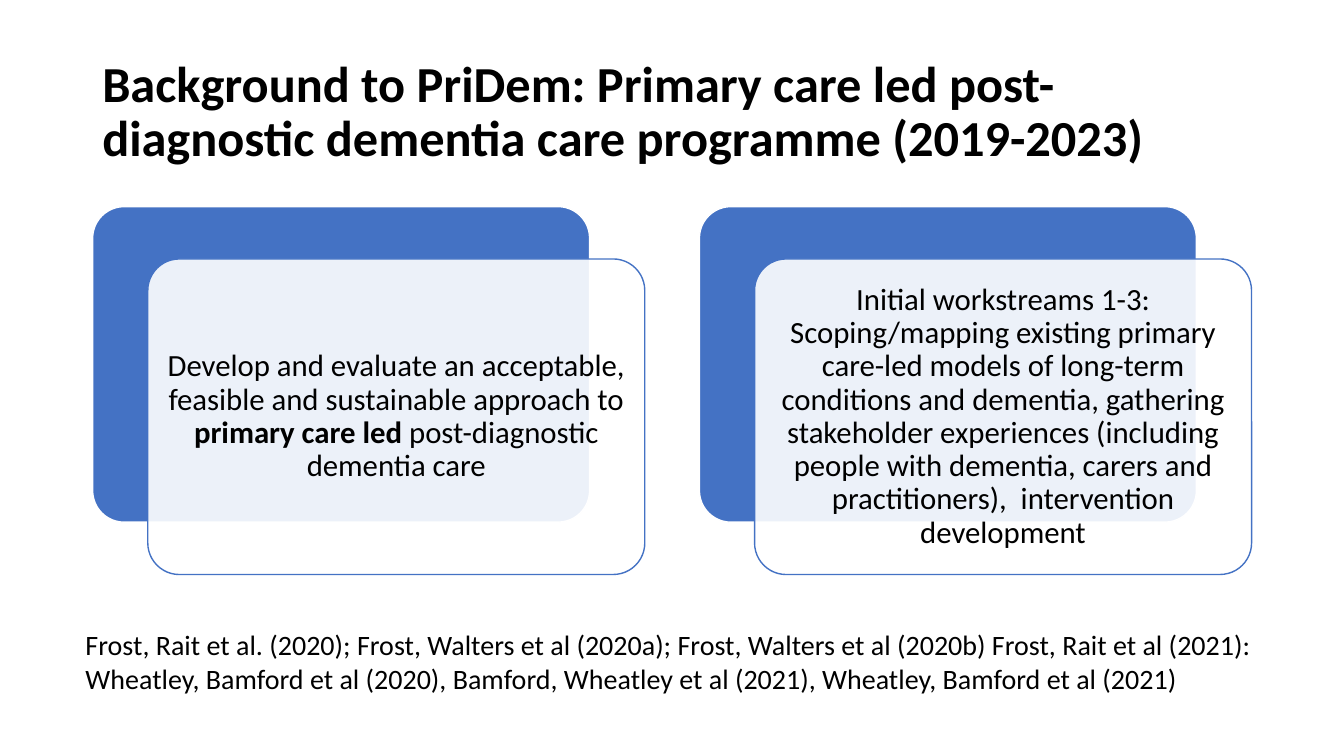
from dataclasses import dataclass

from lxml import etree
from pptx import Presentation
from pptx import util as u
from pptx.dml import color
from pptx.enum import shapes, text
from pptx.oxml import ns

BLUE, WHITE, BLACK = "4472C4", "FFFFFF", "000000"
CARD_WIDTH, CARD_HEIGHT = 355, 225.4
CARD_LEFT, CARD_TOP, CARD_PITCH = 66.2, 147.6, 433.4
FRONT_SHIFT_X, FRONT_SHIFT_Y = 39.4, 37.4
CORNER = 0.1


@dataclass(frozen=True)
class Run:
    wording: str
    bold: bool = False


@dataclass(frozen=True)
class Box:
    left: float
    top: float
    width: float
    height: float

    def lengths(self) -> list[u.Length]:
        return [u.Pt(v) for v in (self.left, self.top, self.width, self.height)]


@dataclass(frozen=True)
class Passage:
    box: Box
    runs: tuple[Run, ...]
    size: float
    anchor: text.MSO_ANCHOR
    line_spacing: float


def rgb(hex_colour: str) -> color.RGBColor:
    return color.RGBColor.from_string(hex_colour)


def apply(target, values: dict) -> None:
    for name, value in values.items():
        setattr(target, name, value)


def write(frame, runs: tuple[Run, ...], size: float, frame_format: dict, paragraph_format: dict) -> None:
    apply(frame, {"word_wrap": True, **frame_format})
    paragraph = frame.paragraphs[0]
    apply(paragraph, paragraph_format)
    for part in runs:
        run = paragraph.add_run()
        run.text = part.wording
        apply(run.font, {"name": "Calibri", "size": u.Pt(size), "bold": part.bold})
        run.font.color.rgb = rgb(BLACK)


def add_passage(slide, passage: Passage) -> None:
    frame = slide.shapes.add_textbox(*passage.box.lengths()).text_frame
    write(frame, passage.runs, passage.size,
          {"vertical_anchor": passage.anchor},
          {"line_spacing": passage.line_spacing})


def add_panel(slide, box: Box, fill: str, line: str, opacity: int = 100):
    panel = slide.shapes.add_shape(shapes.MSO_SHAPE.ROUNDED_RECTANGLE, *box.lengths())
    panel.shadow.inherit = False
    panel.adjustments[0] = CORNER
    panel.fill.solid()
    panel.fill.fore_color.rgb = rgb(fill)
    panel.line.color.rgb = rgb(line)
    panel.line.width = u.Pt(1)
    if opacity < 100:
        fill_colour = panel.fill._xPr.find(ns.qn("a:solidFill"))[0]
        etree.SubElement(fill_colour, ns.qn("a:alpha"), val=str(opacity * 1000))
    return panel


def add_card(slide, left: float, runs: tuple[Run, ...]) -> None:
    add_panel(slide, Box(left, CARD_TOP, CARD_WIDTH, CARD_HEIGHT), BLUE, WHITE)
    front_box = Box(left + FRONT_SHIFT_X, CARD_TOP + FRONT_SHIFT_Y, CARD_WIDTH, CARD_HEIGHT)
    front = add_panel(slide, front_box, WHITE, BLUE, opacity=90)
    margins = {f"margin_{side}": u.Pt(6.6) for side in ("left", "top", "right", "bottom")}
    write(front.text_frame, runs, 22,
          {"vertical_anchor": text.MSO_ANCHOR.MIDDLE, **margins},
          {"alignment": text.PP_ALIGN.CENTER, "line_spacing": 0.9})


TITLE = Passage(
    Box(66, 28.8, 828, 104.4),
    (Run("Background to PriDem: Primary care led post-diagnostic dementia care programme (2019-2023)", True),),
    36, text.MSO_ANCHOR.MIDDLE, 0.9)

REFERENCES = Passage(
    Box(54, 445, 852.5, 55.4),
    (Run("Frost, Rait et al. (2020); Frost, Walters et al (2020a); Frost, Walters et al (2020b) "
         "Frost, Rait et al (2021): Wheatley, Bamford et al (2020), Bamford, Wheatley et al (2021), "
         "Wheatley, Bamford et al (2021)"),),
    20, text.MSO_ANCHOR.TOP, 1.0)

AIM = (
    Run("Develop and evaluate an acceptable, feasible and sustainable approach to "),
    Run("primary care led ", True),
    Run("post-diagnostic dementia care"),
)
WORKSTREAMS = (
    Run("Initial workstreams 1-3: Scoping/mapping existing primary care-led models of long-term "
        "conditions and dementia, gathering stakeholder experiences (including people with "
        "dementia, carers and practitioners),  intervention development"),
)


def main() -> None:
    deck = Presentation()
    apply(deck, {"slide_width": u.Pt(960), "slide_height": u.Pt(540)})
    slide = deck.slides.add_slide(deck.slide_layouts[6])
    add_passage(slide, TITLE)
    for column, runs in enumerate((AIM, WORKSTREAMS)):
        add_card(slide, CARD_LEFT + column * CARD_PITCH, runs)
    add_passage(slide, REFERENCES)
    deck.save("out.pptx")


if __name__ == "__main__":
    main()
